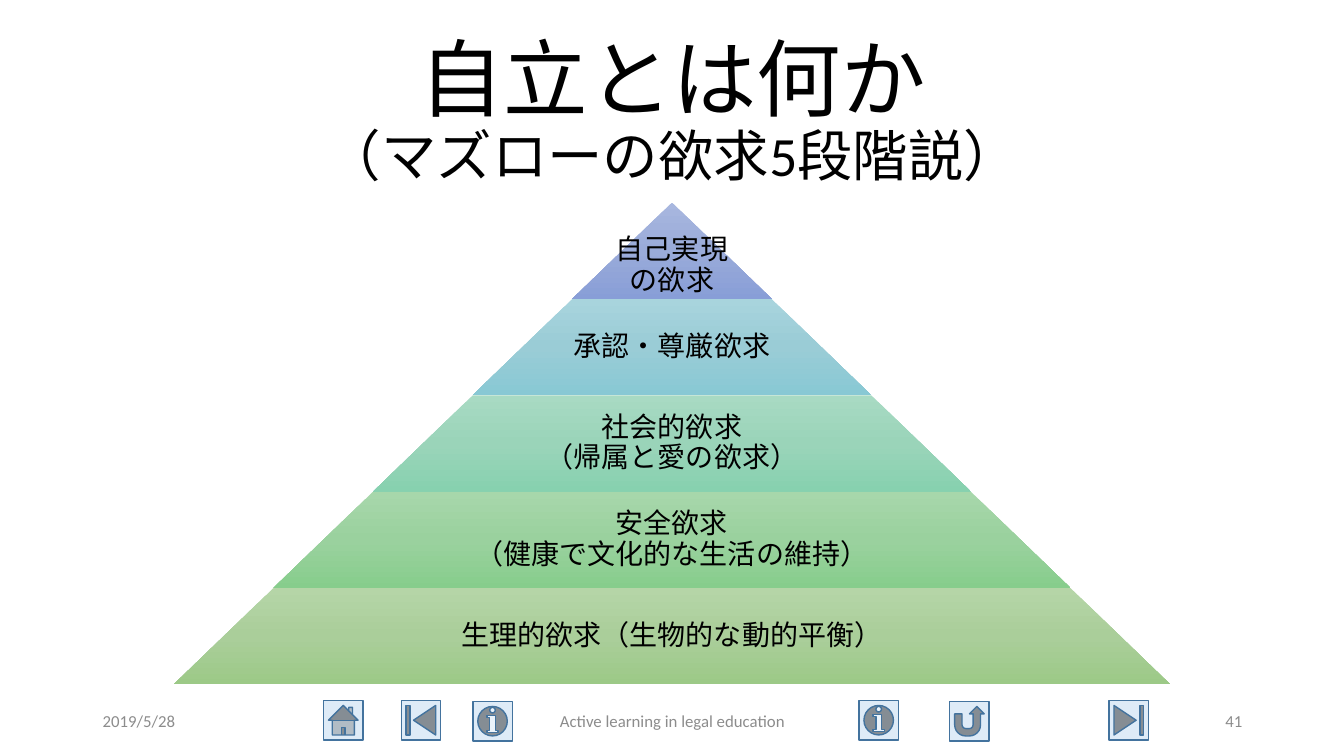
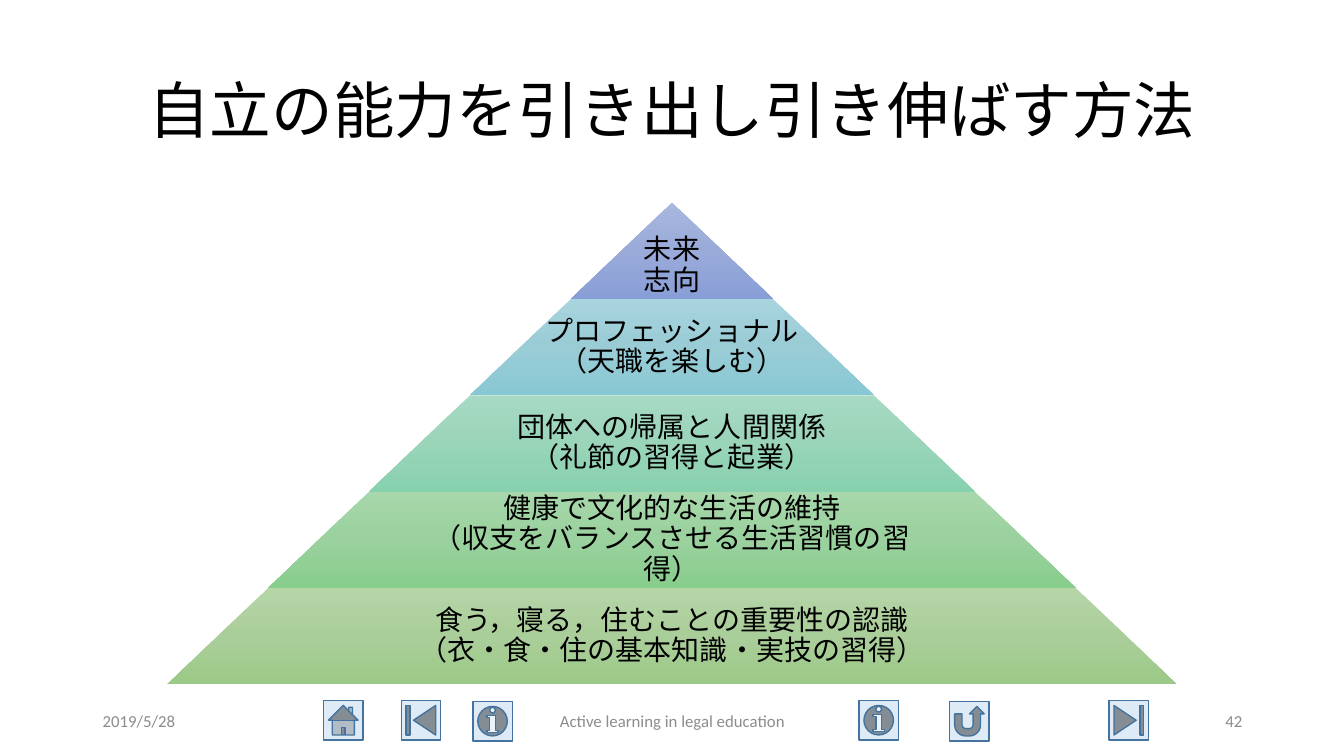
from copy import deepcopy

from pptx import Presentation
from pptx.dml.color import RGBColor
from pptx.enum.shapes import MSO_SHAPE as Shape
from pptx.enum.text import MSO_ANCHOR as Anchor, PP_ALIGN as Align
from pptx.oxml.ns import qn
from pptx.util import Inches, Pt

# Content: title lines with their sizes, pyramid base width, levels from the top
SLIDES = [
    {
        "title": [("自立とは何か", 60.3), ("（マズローの欲求5段階説）", 39.6)],
        "number": "41",
        "base": 9.88,
        "levels": [
            ["自己実現", "の欲求"],
            ["承認・尊厳欲求"],
            ["社会的欲求", "（帰属と愛の欲求）"],
            ["安全欲求", "（健康で文化的な生活の維持）"],
            ["生理的欲求（生物的な動的平衡）"],
        ],
    },
    {
        "title": [("自立の能力を引き出し引き伸ばす方法", 44)],
        "number": "42",
        "base": 10.01,
        "levels": [
            ["未来", "志向"],
            ["プロフェッショナル", "（天職を楽しむ）"],
            ["団体への帰属と人間関係", "（礼節の習得と起業）"],
            ["健康で文化的な生活の維持", "（収支をバランスさせる生活習慣の習得）"],
            ["食う，寝る，住むことの重要性の認識", "（衣・食・住の基本知識・実技の習得）"],
        ],
    },
]
DATE = "2019/5/28"
FOOTER = "Active learning in legal education"

# Shared style
FONT = "Calibri"
BLACK, GREY = "000000", "8C8C8C"
PALE, BLUE = "DEEBF7", "43739E"
SHADES = [
    ("A8B7DF", "9AABD9", "889ED7"),
    ("A8D4DD", "9ACCD6", "88C8D4"),
    ("A8DAC3", "9AD4B9", "87D1AF"),
    ("A7D7AB", "9AD19E", "87CD8C"),
    ("B5D5A7", "AACE9A", "9CC987"),
]
BUTTONS = [
    (Shape.ACTION_BUTTON_HOME, 3.21, 6.95),
    (Shape.ACTION_BUTTON_BEGINNING, 3.98, 6.95),
    (Shape.ACTION_BUTTON_INFORMATION, 4.69, 6.96),
    (Shape.ACTION_BUTTON_INFORMATION, 8.52, 6.95),
    (Shape.ACTION_BUTTON_RETURN, 9.42, 6.96),
    (Shape.ACTION_BUTTON_END, 11, 6.95),
]
WIDE, HIGH = 13.33, 7.5
TOP, TALL = 2.01, 4.78      # pyramid
INSET, LINE = 0.03, 0.3     # label margin and line pitch


def color(code):
    return RGBColor.from_string(code)


def text(slide, lines, box, align=Align.CENTER, ink=BLACK, space=None,
         pad=(0.1, 0.05, 0.1, 0.05)):
    """Put (text, size) lines into one paragraph of a text box."""
    frame = slide.shapes.add_textbox(*map(Inches, box)).text_frame
    frame.word_wrap = True
    frame.vertical_anchor = Anchor.MIDDLE
    (frame.margin_left, frame.margin_top,
     frame.margin_right, frame.margin_bottom) = map(Inches, pad)
    para = frame.paragraphs[0]
    para.alignment = align
    para.line_spacing = space
    for i, (words, size) in enumerate(lines):
        if i:
            para.add_line_break()
        run = para.add_run()
        run.text = words
        run.font.name = FONT
        run.font.size = Pt(size)
        run.font.color.rgb = color(ink)


def shade(shape, codes):
    """Fill a shape from top to bottom with three evenly spaced colours."""
    fill = shape.fill
    fill.gradient()
    fill.gradient_angle = 270
    stops = shape._element.spPr.find(qn("a:gradFill")).find(qn("a:gsLst"))
    stops.insert(1, deepcopy(stops[0]))
    for i, (stop, code) in enumerate(zip(fill.gradient_stops, codes)):
        stop.position = i / 2
        stop.color.rgb = color(code)


def frame(slide, number):
    # Navigation buttons
    for kind, left, top in BUTTONS:
        button = slide.shapes.add_shape(
            kind, *map(Inches, (left, top, 0.39, 0.39)))
        button.shadow.inherit = False
        button.fill.solid()
        button.fill.fore_color.rgb = color(PALE)
        button.line.color.rgb = color(BLUE)
        button.line.width = Pt(1)
    # Date, footer and slide number
    for words, left, wide, align in [
        (DATE, 0.92, 3, Align.LEFT),
        (FOOTER, 4.42, 4.5, Align.CENTER),
        (number, 9.42, 3, Align.RIGHT),
    ]:
        text(slide, [(words, 12)], (left, 6.95, wide, 0.4), align, GREY)


def pyramid(slide, base, levels):
    step, high = base / len(levels), TALL / len(levels)
    for i, (lines, codes) in enumerate(zip(levels, SHADES)):
        wide, top = step * (i + 1), TOP + high * i
        box = ((WIDE - wide) / 2, top, wide, high)
        layer = slide.shapes.add_shape(Shape.TRAPEZOID, *map(Inches, box))
        layer.adjustments[0] = step / 2 / high
        layer.shadow.inherit = False
        layer.line.fill.background()
        shade(layer, codes)
        # The label at the tip is as wide as its layer and sits a line lower
        room = wide * 0.65 if i else wide
        drop = INSET if i else INSET + LINE
        text(slide, [(words, 20) for words in lines],
             ((WIDE - room) / 2, top, room, high),
             space=0.9, pad=(INSET, drop, INSET, INSET))


def main():
    deck = Presentation()
    deck.slide_width, deck.slide_height = Inches(WIDE), Inches(HIGH)
    for page in SLIDES:
        slide = deck.slides.add_slide(deck.slide_layouts[6])
        frame(slide, page["number"])
        text(slide, page["title"], (0.92, 0.4, 11.5, 1.45), space=0.9)
        pyramid(slide, page["base"], page["levels"])
    deck.save("out.pptx")


if __name__ == "__main__":
    main()
